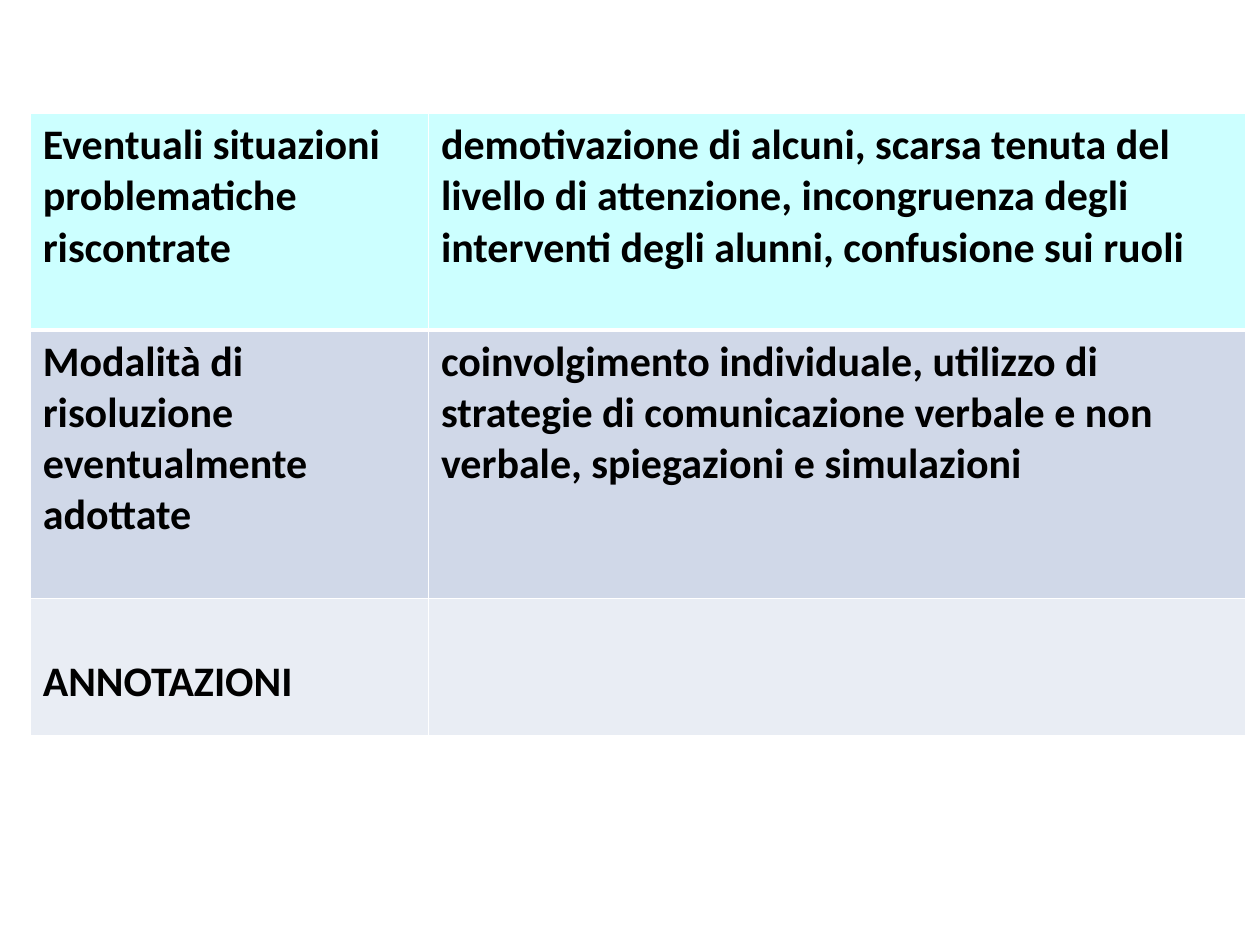
from pptx import Presentation
from pptx.dml.color import RGBColor
from pptx.oxml import parse_xml
from pptx.oxml.ns import nsdecls
from pptx.util import Inches, Pt

COLORS = {"head": "CCFFFF", "band": "D0D8E8", "light": "E9EDF4",
          "text": "000000", "line": "FFFFFF"}
FONT, SIZE = "Calibri", 24
LEFT, TOP = 0.24, 0.9
WIDTHS = [3.16, 6.49]

# Each row: fill, height, top margin, cell texts
ROWS = [
    ("head", 1.72, 0.05, [
        "Eventuali situazioni problematiche riscontrate",
        "demotivazione di alcuni, scarsa tenuta del livello di attenzione, "
        "incongruenza degli interventi degli alunni, confusione sui ruoli"]),
    ("band", 2.13, 0.05, [
        "Modalità di risoluzione eventualmente adottate",
        "coinvolgimento individuale, utilizzo di strategie di comunicazione "
        "verbale e non verbale, spiegazioni e simulazioni"]),
    ("light", 1.09, 0.46, ["ANNOTAZIONI", ""]),
]


def add_border(cell, side, width):
    line = parse_xml(
        f'<a:{side} {nsdecls("a")} w="{Pt(width)}"><a:solidFill>'
        f'<a:srgbClr val="{COLORS["line"]}"/></a:solidFill></a:{side}>')
    cell._tc.get_or_add_tcPr().append(line)


def fill_cell(cell, text, fill, margin, edges):
    # Borders come before the fill in the cell properties
    for side, width in edges.items():
        add_border(cell, side, width)
    cell.fill.solid()
    cell.fill.fore_color.rgb = RGBColor.from_string(COLORS[fill])
    cell.margin_top = Inches(margin)
    cell.text_frame.text = text
    for run in cell.text_frame.paragraphs[0].runs:
        font = run.font
        font.name, font.size, font.bold = FONT, Pt(SIZE), True
        font.color.rgb = RGBColor.from_string(COLORS["text"])


def main():
    prs = Presentation()
    prs.slide_width, prs.slide_height = Inches(10), Inches(7.5)
    slide = prs.slides.add_slide(prs.slide_layouts[6])

    # Table grid
    height = sum(row[1] for row in ROWS)
    table = slide.shapes.add_table(
        len(ROWS), len(WIDTHS), Inches(LEFT), Inches(TOP),
        Inches(sum(WIDTHS)), Inches(height)).table
    for col, width in zip(table.columns, WIDTHS):
        col.width = Inches(width)

    # Cells, with a thick rule under the first row
    for r, (fill, high, margin, texts) in enumerate(ROWS):
        table.rows[r].height = Inches(high)
        edges = {"lnL": 1, "lnR": 1, "lnT": 3 if r == 1 else 1,
                 "lnB": 3 if r == 0 else 1}
        for c, text in enumerate(texts):
            fill_cell(table.cell(r, c), text, fill, margin, edges)

    prs.save("out.pptx")


if __name__ == "__main__":
    main()
